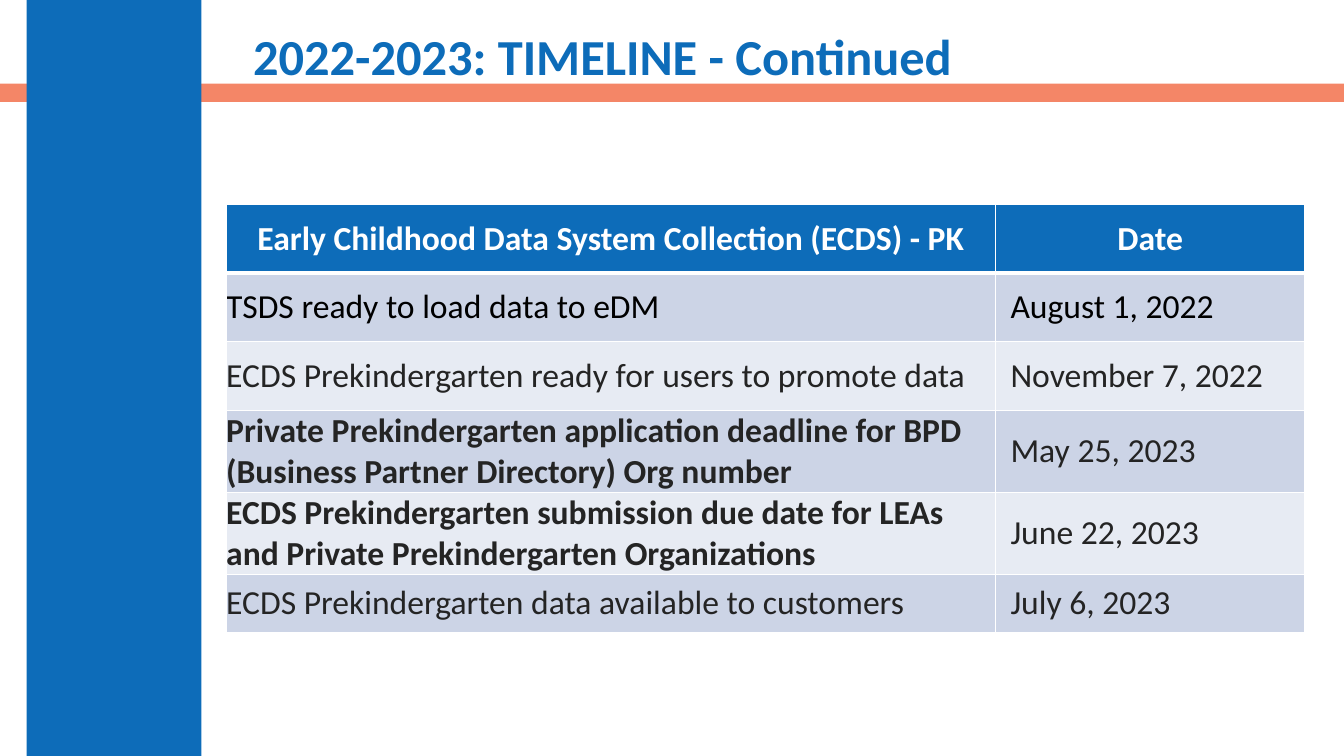
import dataclasses

import lxml.etree
import pptx
import pptx.dml.color
import pptx.enum.shapes
import pptx.enum.text
import pptx.oxml.ns
import pptx.util

WIDTH, HEIGHT = pptx.util.Inches(13.33), pptx.util.Inches(7.5)
FONT = "Calibri"
BLUE, CORAL, WHITE, BLACK, INK = "0D6CB9", "F16038", "FFFFFF", "000000", "242424"
BANDS = ("CCD4E6", "E7EBF3")
PP_ALIGN = pptx.enum.text.PP_ALIGN
MIDDLE = pptx.enum.text.MSO_ANCHOR.MIDDLE


@dataclasses.dataclass
class Box:
    """Position and size in percent of the slide's width and height."""
    left: float
    top: float
    width: float
    height: float

    def emu(self) -> tuple[int, int, int, int]:
        return x(self.left), y(self.top), x(self.width), y(self.height)


@dataclasses.dataclass
class Bar:
    box: Box
    color: str
    opacity: int = 100


@dataclasses.dataclass
class Milestone:
    event: str
    date: str
    height: float
    color: str = INK
    bold: bool = False


BARS = [
    Bar(Box(0, 11.07, 100, 2.4), CORAL, 76),
    Bar(Box(1.98, 0, 13, 100), BLUE),
]
TITLE_BOX = Box(18.08, 2.4, 79, 10.93)
TABLE_BOX = Box(16.83, 27.07, 80.27, 51.74)
COLUMNS = (57.24, 23.03)
TALL, SHORT = 9.07, 7.73
HEADINGS = ("Early Childhood Data System Collection (ECDS) - PK", "Date")
MILESTONES = [
    Milestone("TSDS ready to load data to eDM", "August 1, 2022", TALL, BLACK),
    Milestone("ECDS Prekindergarten ready for users to promote data", "November 7, 2022", TALL),
    Milestone("Private Prekindergarten application deadline for BPD "
              "(Business Partner Directory) Org number", "May 25, 2023", TALL, bold=True),
    Milestone("ECDS Prekindergarten submission due date for LEAs "
              "and Private Prekindergarten Organizations", "June 22, 2023", SHORT, bold=True),
    Milestone("ECDS Prekindergarten data available to customers", "July 6, 2023", SHORT),
]


def x(percent: float) -> int:
    return round(WIDTH * percent / 100)


def y(percent: float) -> int:
    return round(HEIGHT * percent / 100)


def rgb(color: str) -> pptx.dml.color.RGBColor:
    return pptx.dml.color.RGBColor.from_string(color)


def sub(parent, tag: str, **attributes: str):
    return lxml.etree.SubElement(parent, pptx.oxml.ns.qn(tag), **attributes)


def style(p, size: float, color: str, bold: bool) -> None:
    p.font.name = FONT
    p.font.size = pptx.util.Pt(size)
    p.font.bold = bold
    p.font.color.rgb = rgb(color)


def draw_bar(s, bar: Bar) -> None:
    sp = s.shapes.add_shape(pptx.enum.shapes.MSO_SHAPE.RECTANGLE, *bar.box.emu())
    sp.shadow.inherit = False
    sp.line.fill.background()
    sp.fill.solid()
    sp.fill.fore_color.rgb = rgb(bar.color)
    if bar.opacity < 100:
        for clr in sp.element.spPr.iter(pptx.oxml.ns.qn("a:srgbClr")):
            sub(clr, "a:alpha", val=str(bar.opacity * 1000))


def draw_title(s, text: str) -> None:
    title = s.shapes.title
    title.left, title.top, title.width, title.height = TITLE_BOX.emu()
    s.shapes.element.append(title.element)  # in front of the bars
    tf = title.text_frame
    tf.text = text
    tf.word_wrap = True
    tf.vertical_anchor = MIDDLE
    p = tf.paragraphs[0]
    p.alignment = PP_ALIGN.LEFT
    p.line_spacing = 0.9
    style(p, 36, BLUE, True)


def draw_cell(cell, text: str, fill: str, color: str, bold: bool,
              align=PP_ALIGN.LEFT, indent: float = 0, bottom: float = 1) -> None:
    cell.margin_left = x(indent)
    cell.margin_top = cell.margin_right = cell.margin_bottom = 0
    cell.vertical_anchor = MIDDLE
    # Borders come before the fill in the cell's properties
    for side, width in (("L", 1), ("R", 1), ("T", 1), ("B", bottom)):
        ln = sub(cell._tc.get_or_add_tcPr(), f"a:ln{side}", w=str(pptx.util.Pt(width)))
        sub(sub(ln, "a:solidFill"), "a:srgbClr", val=WHITE)
    cell.fill.solid()
    cell.fill.fore_color.rgb = rgb(fill)
    cell.text = text
    p = cell.text_frame.paragraphs[0]
    p.alignment = align
    style(p, 24, color, bold)


def draw_timeline(s) -> None:
    table = s.shapes.add_table(len(MILESTONES) + 1, len(COLUMNS), *TABLE_BOX.emu()).table
    for column, width in zip(table.columns, COLUMNS):
        column.width = x(width)
    # Header
    table.rows[0].height = y(TALL)
    for i, heading in enumerate(HEADINGS):
        draw_cell(table.cell(0, i), heading, BLUE, WHITE, True, PP_ALIGN.CENTER, bottom=3)
    # Milestones in alternating bands
    for i, m in enumerate(MILESTONES, 1):
        table.rows[i].height = y(m.height)
        band = BANDS[(i - 1) % 2]
        draw_cell(table.cell(i, 0), m.event, band, m.color, m.bold)
        draw_cell(table.cell(i, 1), m.date, band, m.color, False, indent=1.12)


def main() -> None:
    prs = pptx.Presentation()
    prs.slide_width, prs.slide_height = WIDTH, HEIGHT
    s = prs.slides.add_slide(prs.slide_layouts[5])
    for bar in BARS:
        draw_bar(s, bar)
    draw_title(s, "2022-2023: TIMELINE - Continued")
    draw_timeline(s)
    prs.save("out.pptx")


if __name__ == "__main__":
    main()
